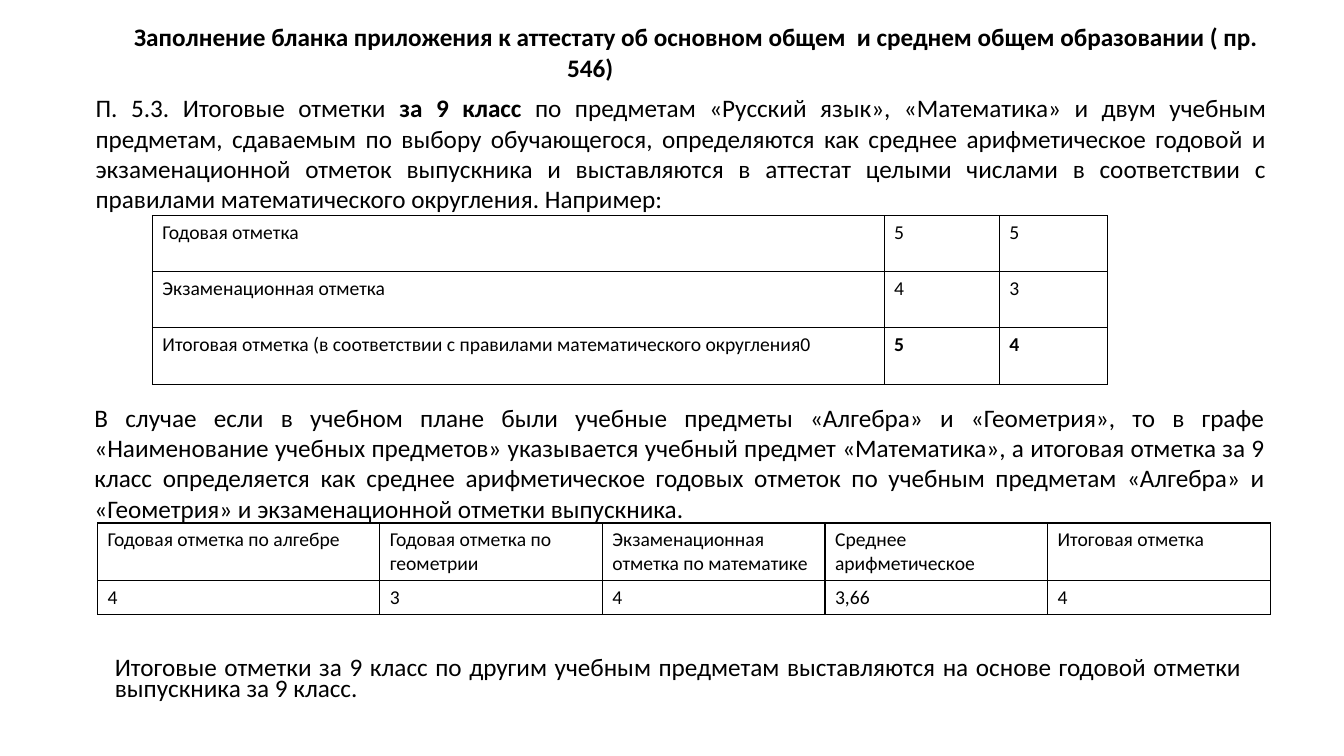
from lxml import etree
from pptx import Presentation
from pptx.dml.color import RGBColor
from pptx.enum.text import MSO_ANCHOR as ANCHOR, MSO_AUTO_SIZE as AUTO, PP_ALIGN as AL
from pptx.oxml import parse_xml
from pptx.util import Cm, Pt

BLACK = "000000"
NS = "http://schemas.openxmlformats.org/drawingml/2006/main"


def write(p, text, size=18, bold=False, color=BLACK, align=None):
    """Add a formatted run to a paragraph."""
    if align is not None:
        p.alignment = align
    r = p.add_run()
    r.text = text
    r.font.name = "Calibri"
    r.font.size = Pt(size)
    r.font.bold = bold
    r.font.color.rgb = RGBColor.from_string(color)


prs = Presentation()
prs.slide_width, prs.slide_height = Cm(33.87), Cm(19.05)
s = prs.slides.add_slide(prs.slide_layouts[0])
title, closing = s.placeholders

# Title: the short second line is indented rather than centred
title.left, title.top, title.width, title.height = Cm(2.54), Cm(0.61), Cm(30), Cm(2.36)
tf = title.text_frame
tf.auto_size = AUTO.NONE
tf.vertical_anchor = ANCHOR.BOTTOM
tf.margin_bottom = Cm(0.9)
write(tf.paragraphs[0],
      "Заполнение бланка приложения к аттестату об основном общем  и среднем общем образовании ( пр.",
      bold=True, align=AL.CENTER)
p = tf.add_paragraph()
p._p.get_or_add_pPr().set("marL", str(Cm(11.5)))
write(p, "546)", bold=True, align=AL.LEFT)

# Closing remark
closing.left, closing.top, closing.width, closing.height = Cm(2.64), Cm(15.44), Cm(28.9), Cm(2.29)
tf = closing.text_frame
tf.auto_size = AUTO.NONE
tf.vertical_anchor = ANCHOR.TOP
tf.margin_top = Cm(1.17)
p = tf.paragraphs[0]
p.line_spacing = 0.7
p.space_before = Pt(0)
write(p, "Итоговые отметки за 9 класс по другим учебным предметам выставляются на основе "
      "годовой отметки выпускника за 9 класс.", align=AL.JUSTIFY)

# Explanations above the tables: left, top, runs of (text, bold)
explanations = [
    (2.16, 2.21, [
        ("П. 5.3. Итоговые отметки ", False),
        ("за 9 класс ", True),
        ("по предметам «Русский язык», «Математика» и двум учебным предметам, сдаваемым по выбору "
         "обучающегося, определяются как среднее арифметическое годовой и экзаменационной отметок "
         "выпускника и выставляются в аттестат целыми числами в соответствии с правилами "
         "математического округления. Например:", False)]),
    (2.13, 10.01, [
        ("В случае если в учебном плане были учебные предметы «Алгебра» и «Геометрия», то в графе "
         "«Наименование учебных предметов» указывается учебный предмет «Математика», а итоговая "
         "отметка за 9 класс определяется как среднее арифметическое годовых отметок по учебным "
         "предметам «Алгебра» и «Геометрия» и экзаменационной отметки выпускника.", False)]),
]
for left, top, runs in explanations:
    tf = s.shapes.add_textbox(Cm(left), Cm(top), Cm(30), Cm(3.33)).text_frame
    tf.word_wrap = True
    for text, bold in runs:
        write(tf.paragraphs[0], text, bold=bold, align=AL.JUSTIFY)

# Tables: left, top, column widths, row heights, rows, bold cells
tables = [
    (3.84, 5.44, [18.44, 2.9, 2.72], [1.4, 1.42, 1.42],
     [["Годовая отметка", "5", "5"],
      ["Экзаменационная отметка", "4", "3"],
      ["Итоговая отметка (в соответствии с правилами математического округления0", "5", "4"]],
     {(2, 1), (2, 2)}),
    (2.46, 13.18, [7.11] + [5.61] * 4, [1.45, 0.84],
     [["Годовая отметка по алгебре", "Годовая отметка по геометрии",
       "Экзаменационная отметка по математике", "Среднее арифметическое", "Итоговая отметка"],
      ["4", "3", "4", "3,66", "4"]],
     set()),
]
for left, top, widths, heights, rows, bold_cells in tables:
    tbl = s.shapes.add_table(len(rows), len(widths), Cm(left), Cm(top),
                             Cm(sum(widths)), Cm(sum(heights))).table
    tbl.first_row = tbl.horz_banding = False
    for col, width in zip(tbl.columns, widths):
        col.width = Cm(width)
    for row, height in zip(tbl.rows, heights):
        row.height = Cm(height)
    for i, texts in enumerate(rows):
        for j, text in enumerate(texts):
            cell = tbl.cell(i, j)
            write(cell.text_frame.paragraphs[0], text, size=14, bold=(i, j) in bold_cells)
            # Thin black borders, no fill
            tcPr = cell._tc.get_or_add_tcPr()
            for side in "LRTB":
                ln = etree.SubElement(tcPr, f"{{{NS}}}ln{side}", w=str(Pt(1)))
                ln.append(parse_xml(f'<a:solidFill xmlns:a="{NS}"><a:srgbClr val="{BLACK}"/></a:solidFill>'))
            cell.fill.background()

prs.save("out.pptx")
